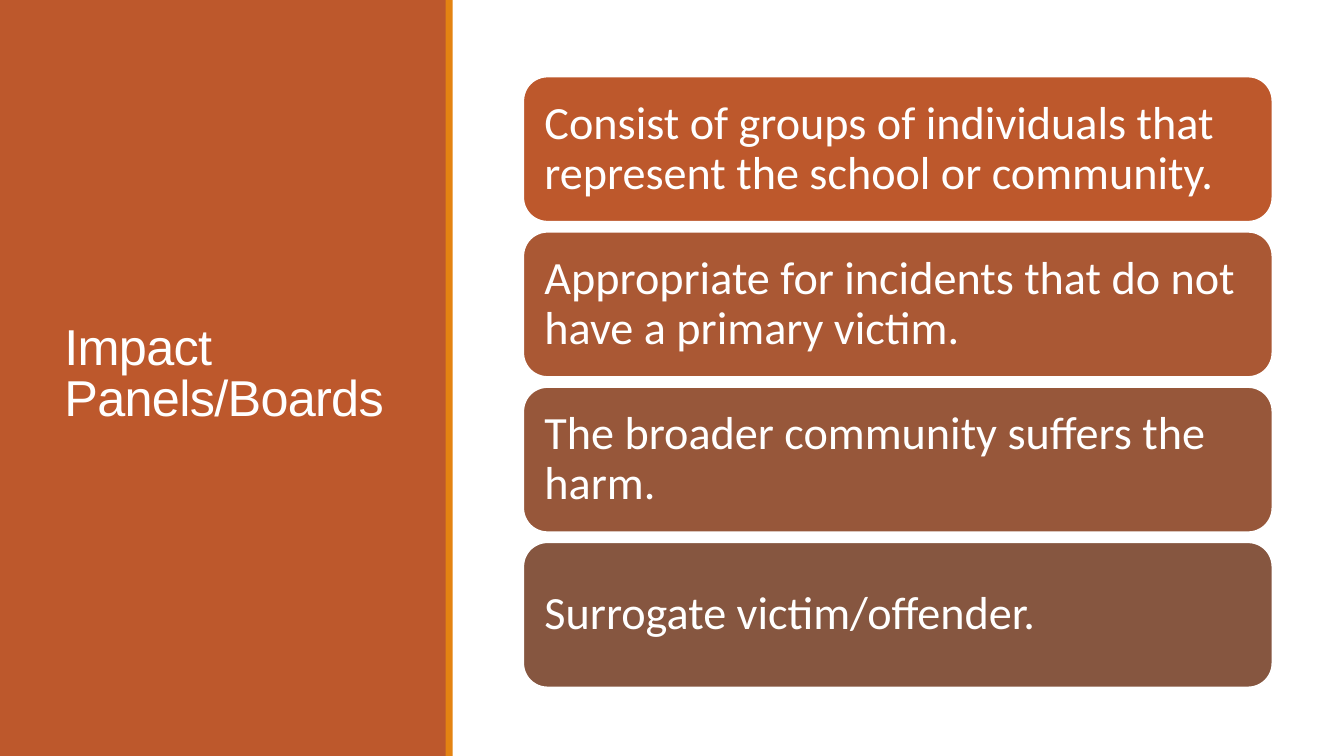
from pptx import Presentation
from pptx.dml.color import RGBColor
from pptx.enum.shapes import MSO_SHAPE
from pptx.enum.text import MSO_ANCHOR, PP_ALIGN
from pptx.util import Inches, Pt

WHITE = RGBColor(0xFF, 0xFF, 0xFF)
RUST = RGBColor(0xBD, 0x58, 0x2C)
ORANGE = RGBColor(0xE4, 0x83, 0x12)
CLAY = RGBColor(0xAA, 0x58, 0x34)
BROWN = RGBColor(0x97, 0x57, 0x3A)
UMBER = RGBColor(0x86, 0x56, 0x40)

CARDS = [
    ("Consist of groups of individuals that represent the school or community.", RUST),
    ("Appropriate for incidents that do not have a primary victim.", CLAY),
    ("The broader community suffers the harm.", BROWN),
    ("Surrogate victim/offender.", UMBER),
]
CARD_TOP, CARD_PITCH = 0.76, 1.54


def add_block(slide, kind, left, top, width, height, color):
    block = slide.shapes.add_shape(
        kind, Inches(left), Inches(top), Inches(width), Inches(height))
    block.shadow.inherit = False
    block.fill.solid()
    block.fill.fore_color.rgb = color
    block.line.fill.background()
    return block


def write(frame, text, font_name, size, line_spacing):
    frame.word_wrap = True
    frame.vertical_anchor = MSO_ANCHOR.MIDDLE
    paragraph = frame.paragraphs[0]
    paragraph.text = text
    paragraph.alignment = PP_ALIGN.LEFT
    paragraph.line_spacing = line_spacing
    paragraph.font.name = font_name
    paragraph.font.size = Pt(size)
    paragraph.font.color.rgb = WHITE
    return paragraph


def add_title(slide, text):
    title = slide.shapes.add_textbox(
        Inches(0.54), Inches(0.57), Inches(3.37), Inches(6.31))
    paragraph = write(title.text_frame, text, "Arial", 36, 0.85)
    # Slightly tightened letter spacing, in hundredths of a point
    paragraph.runs[0].font._element.set("spc", "-50")


def add_card(slide, top, text, color):
    card = add_block(slide, MSO_SHAPE.ROUNDED_RECTANGLE, 5.19, top, 7.43, 1.44, color)
    card.line.color.rgb = WHITE
    card.line.width = Pt(1.25)
    frame = card.text_frame
    frame.margin_left = frame.margin_right = Inches(0.14)
    frame.margin_top = frame.margin_bottom = Inches(0.14)
    write(frame, text, "Calibri", 33, 0.9)


def main():
    deck = Presentation()
    deck.slide_width, deck.slide_height = Inches(13.33), Inches(7.5)
    slide = deck.slides.add_slide(deck.slide_layouts[6])
    slide.background.fill.solid()
    slide.background.fill.fore_color.rgb = WHITE

    # Title panel with its accent stripe
    add_block(slide, MSO_SHAPE.RECTANGLE, 0, 0, 4.43, 7.5, RUST)
    add_title(slide, "Impact Panels/Boards")
    add_block(slide, MSO_SHAPE.RECTANGLE, 4.42, 0, 0.07, 7.5, ORANGE)

    # Stack of cards
    for row, (text, color) in enumerate(CARDS):
        add_card(slide, CARD_TOP + row * CARD_PITCH, text, color)

    deck.save("out.pptx")


if __name__ == "__main__":
    main()
